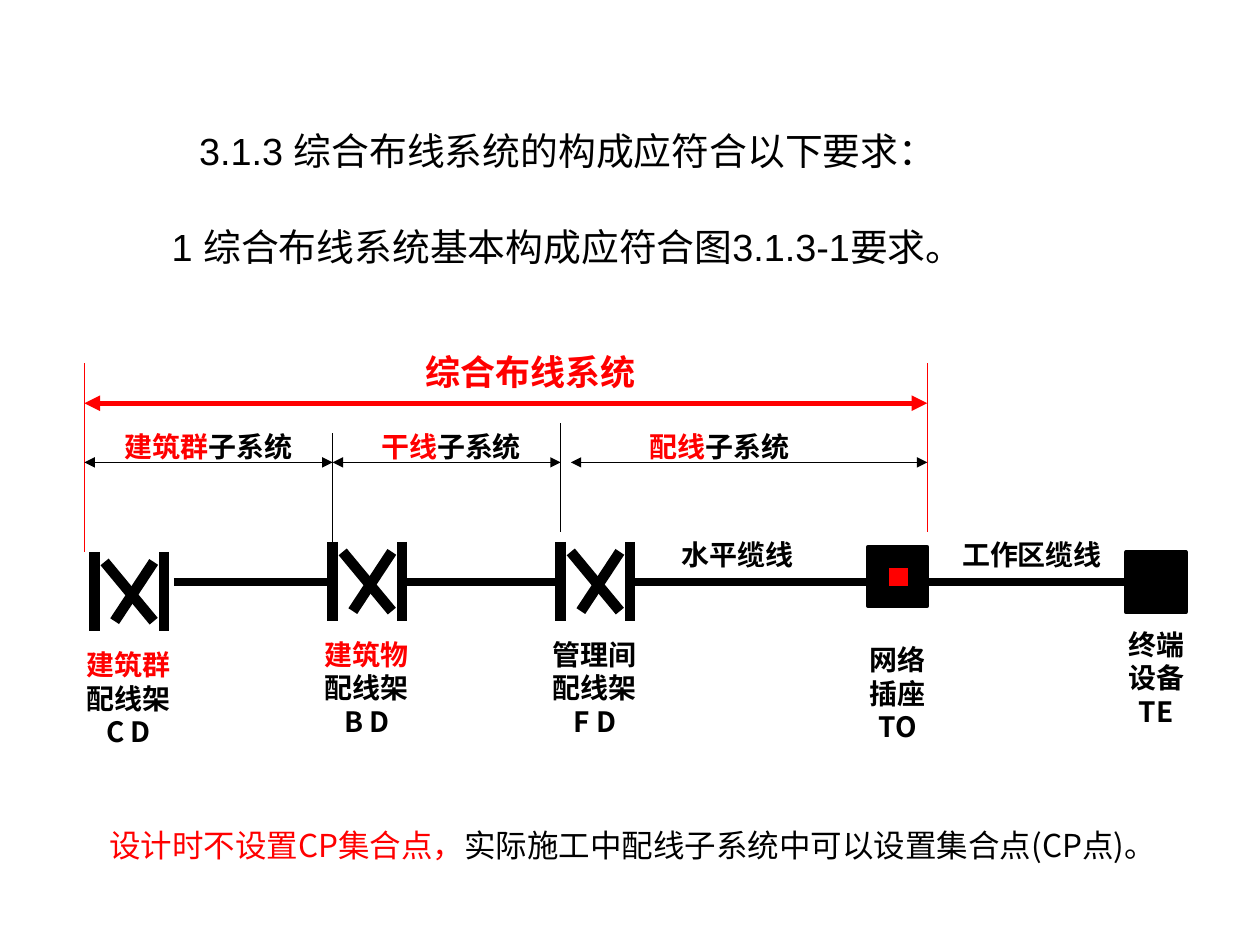
from dataclasses import dataclass

from pptx import Presentation
from pptx.dml.color import RGBColor
from pptx.enum.shapes import MSO_CONNECTOR, MSO_SHAPE
from pptx.enum.text import MSO_ANCHOR, MSO_AUTO_SIZE, PP_ALIGN
from pptx.oxml.ns import qn
from pptx.util import Emu, Pt
from lxml.etree import SubElement


@dataclass(frozen=True)
class Theme:
    black: RGBColor = RGBColor(0, 0, 0)
    red: RGBColor = RGBColor(255, 0, 0)
    latin: str = "Arial"
    chinese: str = "Noto Sans CJK SC"
    title: float = 21.6
    note: float = 18
    system: float = 20
    label: float = 16
    hairline: float = 0.75
    border: float = 2.25
    span: float = 3
    cable: float = 4.5
    frame: float = 6


@dataclass(frozen=True)
class Run:
    text: str
    color: RGBColor


@dataclass(frozen=True)
class Box:
    left: int
    top: int
    width: int
    height: int


@dataclass(frozen=True)
class Label:
    box: Box
    paragraphs: list[list[Run]]


@dataclass(frozen=True)
class Line:
    start: tuple[int, int]
    end: tuple[int, int]
    color: RGBColor
    width: float
    arrows: bool = False


THEME = Theme()
BLACK, RED = THEME.black, THEME.red
PX_PER_INCH = 100


def px(length: int) -> Emu:
    return Emu(length * 914400 // PX_PER_INCH)


def place(shape, box: Box) -> None:
    shape.left, shape.top = px(box.left), px(box.top)
    shape.width, shape.height = px(box.width), px(box.height)


def write(frame, paragraphs: list[list[Run]], *, size: float, font: str = THEME.chinese,
          bold: bool = False, align=PP_ALIGN.CENTER, gap: float = 0) -> None:
    """Fill a text frame; gap is the space before every paragraph but the first."""
    frame.word_wrap = True
    for index, runs in enumerate(paragraphs):
        paragraph = frame.add_paragraph() if index else frame.paragraphs[0]
        paragraph.alignment = align
        paragraph.space_before = Pt(gap if index else 0)
        for part in runs:
            run = paragraph.add_run()
            run.text = part.text
            run.font.size, run.font.bold = Pt(size), bold
            run.font.color.rgb = part.color
            run.font.name = font
            SubElement(run.font._element, qn("a:ea")).set("typeface", THEME.chinese)


def add_label(shapes, label: Label, *, size: float = THEME.label, bold: bool = True,
              **text_format) -> None:
    shape = shapes.add_textbox(0, 0, 0, 0)
    place(shape, label.box)
    write(shape.text_frame, label.paragraphs, size=size, bold=bold, **text_format)
    shape.text_frame.auto_size = MSO_AUTO_SIZE.SHAPE_TO_FIT_TEXT


def add_line(shapes, line: Line):
    connector = shapes.add_connector(
        MSO_CONNECTOR.STRAIGHT, *map(px, line.start), *map(px, line.end))
    connector.line.color.rgb = line.color
    connector.line.width = Pt(line.width)
    if line.arrows:
        outline = connector.line._get_or_add_ln()
        for tag in ("a:headEnd", "a:tailEnd"):
            SubElement(outline, qn(tag)).set("type", "triangle")
    SubElement(connector._element.spPr, qn("a:effectLst"))
    return connector


def add_square(shapes, box: Box, color: RGBColor, border: float):
    shape = shapes.add_shape(MSO_SHAPE.RECTANGLE, 0, 0, 0, 0)
    place(shape, box)
    shape.shadow.inherit = False
    shape.fill.solid()
    shape.fill.fore_color.rgb = color
    shape.line.color.rgb = BLACK
    shape.line.width = Pt(border)
    return shape


def add_frame(shapes, left: int, top: int, name: Run, code: str) -> None:
    """Distribution frame: two posts, a cross between them and a caption."""
    group = shapes.add_group_shape().shapes
    for x1, y1, x2, y2 in ((0, 0, 0, 63), (55, 0, 55, 63), (8, 8, 47, 55), (47, 8, 16, 55)):
        add_line(group, Line((left + x1, top + y1), (left + x2, top + y2), BLACK, THEME.frame))
    caption = [[name], [Run("配线架", BLACK)], [Run(code, BLACK)]]
    add_label(shapes, Label(Box(left - 24, top + 71, 102, 90), caption))


def main() -> None:
    presentation = Presentation()
    presentation.slide_width, presentation.slide_height = px(1000), px(750)
    slide = presentation.slides.add_slide(presentation.slide_layouts[0])
    shapes = slide.shapes
    subtitle = slide.placeholders[1]._element
    subtitle.getparent().remove(subtitle)

    # Title
    title = shapes.title
    place(title, Box(39, 107, 823, 134))
    frame = title.text_frame
    frame.auto_size = MSO_AUTO_SIZE.NONE
    frame.vertical_anchor = MSO_ANCHOR.MIDDLE
    frame.margin_bottom = px(38)
    write(frame, [[Run("3.1.3 综合布线系统的构成应符合以下要求：", BLACK)],
                  [Run("1 综合布线系统基本构成应符合图3.1.3-1要求。", BLACK)]],
          size=THEME.title, font=THEME.latin, gap=29)

    # Boundaries and spans of the subsystems
    cd_edge, bd_edge, fd_edge, to_edge = 67, 264, 445, 736
    for x, bottom, top, color in ((fd_edge, 422, 336, BLACK), (to_edge, 422, 336, BLACK),
                                  (bd_edge, 430, 344, BLACK), (cd_edge, 438, 288, RED),
                                  (to_edge, 422, 288, RED)):
        add_line(shapes, Line((x, bottom), (x, top), color, THEME.hairline))
    for start, end in ((cd_edge, bd_edge), (bd_edge, fd_edge), (fd_edge + 8, to_edge)):
        add_line(shapes, Line((start, 367), (end, 367), BLACK, THEME.hairline, arrows=True))
    add_line(shapes, Line((cd_edge, 320), (to_edge, 320), RED, THEME.span, arrows=True))
    add_label(shapes, Label(Box(303, 273, 236, 43), [[Run("综合布线系统", RED)]]),
              size=THEME.system)
    for left, width, name in ((83, 165, "建筑群"), (287, 142, "干线"), (500, 142, "配线")):
        add_label(shapes, Label(Box(left, 336, width, 37),
                                [[Run(name, RED), Run("子系统", BLACK)]]))

    # Cables
    cable_y = 462
    for start, end in ((138, bd_edge), (319, fd_edge), (500, 689)):
        add_line(shapes, Line((start, cable_y), (end, cable_y), BLACK, THEME.cable))
    add_label(shapes, Label(Box(531, 422, 126, 37), [[Run("水平缆线", BLACK)]]),
              font=THEME.latin, align=PP_ALIGN.LEFT)
    add_label(shapes, Label(Box(752, 422, 134, 37), [[Run("工作区缆线", BLACK)]]))

    # Distribution frames
    add_frame(shapes, 75, 438, Run("建筑群", RED), "C D")
    add_frame(shapes, bd_edge, 430, Run("建筑物", RED), "B D")
    add_frame(shapes, fd_edge, 430, Run("管理间", BLACK), "F D")

    # Network outlet and terminal equipment
    outlet = shapes.add_group_shape().shapes
    add_square(outlet, Box(689, 434, 47, 47), BLACK, THEME.border)
    add_square(outlet, Box(705, 450, 16, 16), RED, THEME.hairline)
    terminal = add_square(shapes, Box(894, 438, 47, 48), BLACK, THEME.border)
    work_cable = add_line(
        shapes, Line((to_edge, cable_y), (894, cable_y), BLACK, THEME.cable))
    work_cable.end_connect(terminal, 1)
    for left, top, name in ((673, 505, "网络插座TO"), (878, 493, "终端设备TE")):
        add_label(shapes, Label(Box(left, top, 79, 90), [[Run(name, BLACK)]]))

    # Note
    add_label(shapes, Label(Box(77, 651, 923, 40),
                            [[Run("设计时不设置CP集合点，", RED),
                              Run("实际施工中配线子系统中可以设置集合点(CP点)。", BLACK)]]),
              size=THEME.note, bold=False, align=PP_ALIGN.LEFT)

    presentation.save("out.pptx")


if __name__ == "__main__":
    main()
